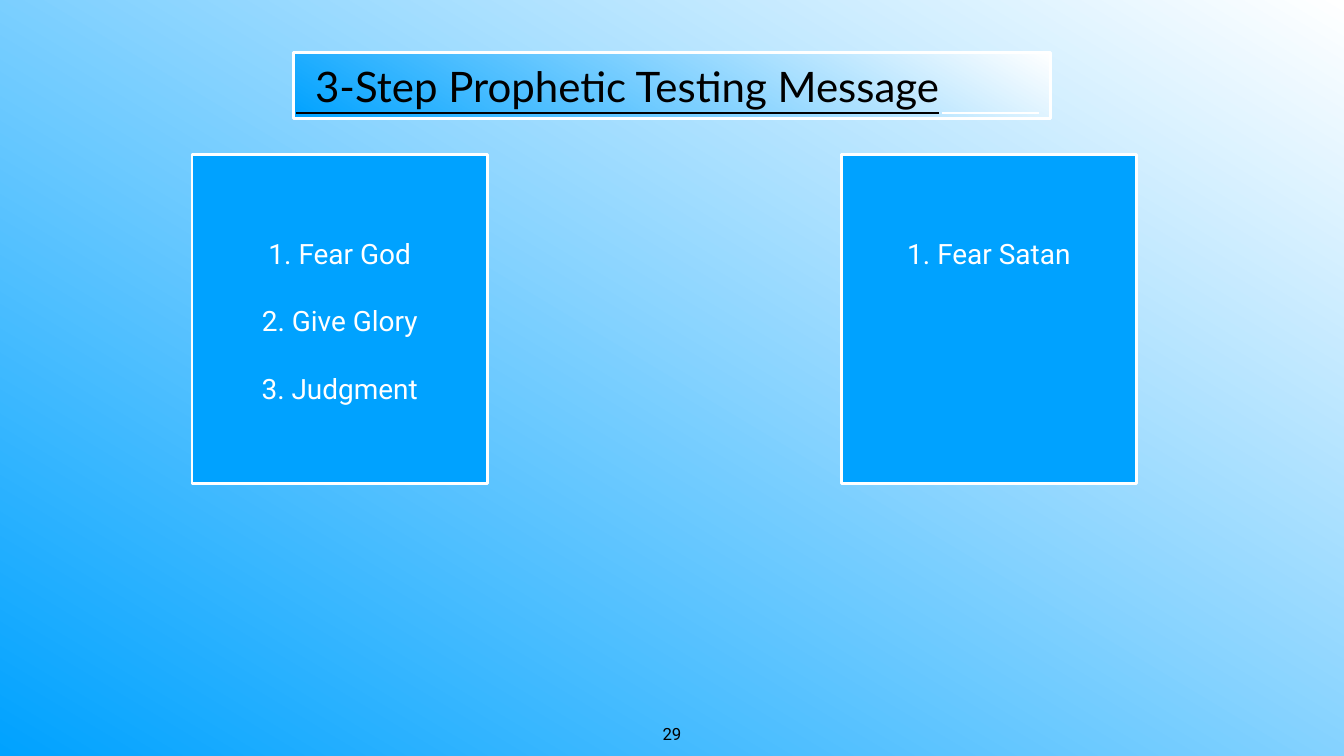
from pptx import Presentation
from pptx.dml.color import RGBColor
from pptx.enum.shapes import MSO_CONNECTOR, MSO_SHAPE
from pptx.enum.text import MSO_ANCHOR, PP_ALIGN
from pptx.oxml.ns import qn
from pptx.util import Pt

RECTANGLE = MSO_SHAPE.RECTANGLE
STRAIGHT = MSO_CONNECTOR.STRAIGHT
TOP, MIDDLE = MSO_ANCHOR.TOP, MSO_ANCHOR.MIDDLE
LEFT, CENTER = PP_ALIGN.LEFT, PP_ALIGN.CENTER
WHITE, BLACK, BLUE = "FFFFFF", "000000", "00A2FF"


def color(value):
    return RGBColor.from_string(value)


class SlideBuilder:
    """Draws styled elements on the current slide, with lengths in points."""

    font = "Roboto"
    title_font = "Lato"
    gradient_angle = 239
    border = 4

    def __init__(self, page):
        self.page = page

    def gradient(self, fill):
        fill.gradient()
        fill.gradient_angle = self.gradient_angle
        for stop, value in zip(fill.gradient_stops, (WHITE, BLUE)):
            stop.color.rgb = color(value)

    def background(self):
        self.gradient(self.page.background.fill)

    def add_text(self, box, lines, size, font, value, align, anchor,
                 insets=(0, 0, 0, 0), gap=0, underline=False, wrap=True):
        frame = box.text_frame
        frame.word_wrap = wrap
        frame.vertical_anchor = anchor
        (frame.margin_left, frame.margin_top,
         frame.margin_right, frame.margin_bottom) = map(Pt, insets)
        for index, line in enumerate(lines):
            para = frame.add_paragraph() if index else frame.paragraphs[0]
            para.alignment = align
            para.space_before = Pt(gap if index else 0)
            span = para.add_run()
            span.text = line
            span.font.size = Pt(size)
            span.font.name = font
            span.font.underline = underline
            span.font.color.rgb = color(value)

    def rectangle(self, left, top, width, height):
        box = self.page.shapes.add_shape(
            RECTANGLE, Pt(left), Pt(top), Pt(width), Pt(height))
        box.shadow.inherit = False
        box.line.color.rgb = color(WHITE)
        box.line.width = Pt(self.border)
        return box

    def panel(self, left, steps):
        box = self.rectangle(left, 220.3, 422, 471)
        box.fill.solid()
        box.fill.fore_color.rgb = color(BLUE)
        self.add_text(box, steps, 40, self.font, WHITE, CENTER, TOP,
                      insets=(0, 117, 0, 0), gap=48.5)

    def title(self, text):
        box = self.rectangle(419.8, 74.9, 1081.4, 94.3)
        self.gradient(box.fill)
        self.add_text(box, [text], 60, self.title_font, BLACK, LEFT, MIDDLE,
                      insets=(30.3, 4, 4, 4), underline=True)

    def rule(self, start, end, y, value):
        line = self.page.shapes.add_connector(
            STRAIGHT, Pt(start), Pt(y), Pt(end), Pt(y))
        line.line.color.rgb = color(value)
        line.line.width = Pt(3)
        properties = line._element.spPr
        properties.append(properties.makeelement(qn("a:effectLst"), {}))

    def page_number(self, text):
        box = self.page.shapes.add_textbox(
            Pt(942), Pt(1030.3), Pt(36), Pt(36))
        self.add_text(box, [text], 24, self.font, BLACK, CENTER, TOP,
                      insets=(4, 4, 4, 4), wrap=False)


def main():
    deck = Presentation()
    deck.slide_width, deck.slide_height = Pt(1920), Pt(1080)
    builder = SlideBuilder(deck.slides.add_slide(deck.slide_layouts[6]))
    builder.background()
    builder.page_number("29")
    builder.panel(274.3, ["1. Fear God", "2. Give Glory", "3. Judgment"])
    builder.panel(1201.7, ["1. Fear Satan"])
    builder.title("3-Step Prophetic Testing Message")
    builder.rule(423, 451, 161.4, BLACK)
    builder.rule(1346, 1484, 161.4, WHITE)
    deck.save("out.pptx")


if __name__ == "__main__":
    main()
